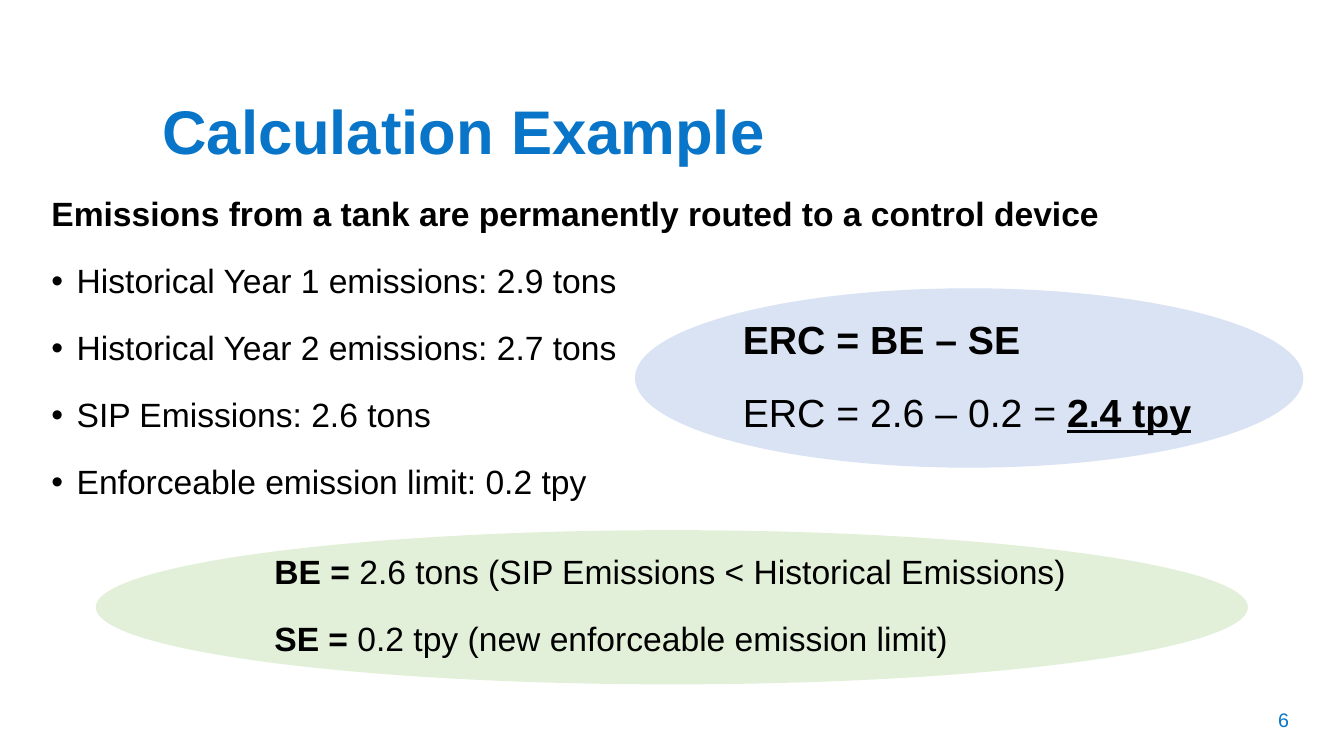
from lxml import etree
from pptx import Presentation
from pptx.dml.color import RGBColor
from pptx.enum.shapes import MSO_SHAPE
from pptx.enum.text import MSO_ANCHOR, MSO_AUTO_SIZE, PP_ALIGN
from pptx.oxml.ns import qn
from pptx.util import Inches, Pt

ELLIPSE = MSO_SHAPE.OVAL
TOP, MIDDLE = MSO_ANCHOR.TOP, MSO_ANCHOR.MIDDLE
LEFT, CENTER = PP_ALIGN.LEFT, PP_ALIGN.CENTER
NO_FIT = MSO_AUTO_SIZE.NONE
COLUMNS, ROWS = 80, 45
FONT = "Arial"
BLUE, BLACK = "0875C8", "000000"
PALE_GREEN, PALE_BLUE = "E2F0D9", "DAE3F3"


def color(value):
    return RGBColor.from_string(value)


def add_span(para, text, size=24, ink=BLACK, bold=False, underline=False):
    span = para.add_run()
    span.text = text
    font = span.font
    font.name, font.size, font.bold = FONT, Pt(size), bold
    font.underline = underline
    font.color.rgb = color(ink)


def set_bullet(para, char=None):
    """Give the paragraph a hanging bullet, or none at all."""
    indent = Inches(0.25) if char else 0
    properties = para._p.get_or_add_pPr()
    properties.set("marL", str(indent))
    properties.set("indent", str(-indent))
    if char:
        etree.SubElement(properties, qn("a:buChar")).set("char", char)
    else:
        etree.SubElement(properties, qn("a:buNone"))


class SlideBuilder:
    def __init__(self, deck):
        self.column = deck.slide_width / COLUMNS
        self.row = deck.slide_height / ROWS
        self.page = deck.slides.add_slide(deck.slide_layouts[1])

    def area(self, left, top, width, height):
        return (round(left * self.column), round(top * self.row),
                round(width * self.column), round(height * self.row))

    def fill_text(self, box, lines, anchor=TOP, align=LEFT, spaced=True, **style):
        """Each line is a list of (text, format) spans."""
        frame = box.text_frame
        frame.word_wrap, frame.auto_size = True, NO_FIT
        frame.vertical_anchor = anchor
        for number, spans in enumerate(lines):
            para = frame.add_paragraph() if number else frame.paragraphs[0]
            para.alignment, para.line_spacing = align, 0.9
            para.space_before = Pt(10 if number else 0)
            para.space_after = Pt(12 if spaced else 0)
            for text, extra in spans:
                add_span(para, text, **{**style, **extra})
        return frame.paragraphs

    def place(self, box, grid):
        box.left, box.top, box.width, box.height = self.area(*grid)
        return box

    def title(self, text, grid):
        box = self.place(self.page.shapes.title, grid)
        self.fill_text(box, [[(text, {})]], spaced=False, size=44, ink=BLUE, bold=True)

    def body(self, heading, items, grid):
        box = self.place(self.page.placeholders[1], grid)
        lines = [[(heading, {"bold": True})]] + [[(item, {})] for item in items]
        first, *rest = self.fill_text(box, lines)
        set_bullet(first)
        for para in rest:
            set_bullet(para, "•")

    def ellipse(self, lines, grid, fill, size):
        shape = self.page.shapes.add_shape(ELLIPSE, *self.area(*grid))
        shape.shadow.inherit = False
        shape.fill.solid()
        shape.fill.fore_color.rgb = color(fill)
        shape.line.fill.background()
        self.fill_text(shape, lines, anchor=MIDDLE, size=size)

    def page_number(self, text, grid):
        box = self.page.shapes.add_textbox(*self.area(*grid))
        self.fill_text(box, [[(text, {})]], anchor=MIDDLE, align=CENTER,
                       spaced=False, size=14, ink=BLUE)


def main():
    deck = Presentation()
    deck.slide_width, deck.slide_height = Inches(13.33), Inches(7.5)
    slide = SlideBuilder(deck)
    strong = {"bold": True}

    # Title and the given data
    slide.title("Calculation Example", (9.06, 5.7, 61.86, 8.7))
    slide.body(
        "Emissions from a tank are permanently routed to a control device",
        ["Historical Year 1 emissions: 2.9 tons",
         "Historical Year 2 emissions: 2.7 tons",
         "SIP Emissions: 2.6 tons",
         "Enforceable emission limit: 0.2 tpy"],
        (2.46, 11.46, 65.1, 18.66))

    # Values of BE and SE
    slide.ellipse(
        [[("BE =", strong), (" 2.6 tons (SIP Emissions < Historical Emissions)", {})],
         [("SE =", strong), (" 0.2 tpy (new enforceable emission limit)", {})]],
        (5.7, 31.56, 68.58, 9.18), PALE_GREEN, 24)

    # Resulting ERC
    slide.ellipse(
        [[("ERC = BE – SE", strong)],
         [("ERC = 2.6 – 0.2 = ", {}), ("2.4 tpy", {"bold": True, "underline": True})]],
        (37.8, 17.16, 39.78, 10.68), PALE_BLUE, 28)

    # Footer
    slide.page_number("6", (73.74, 41.7, 5.34, 2.4))
    deck.save("out.pptx")


if __name__ == "__main__":
    main()
